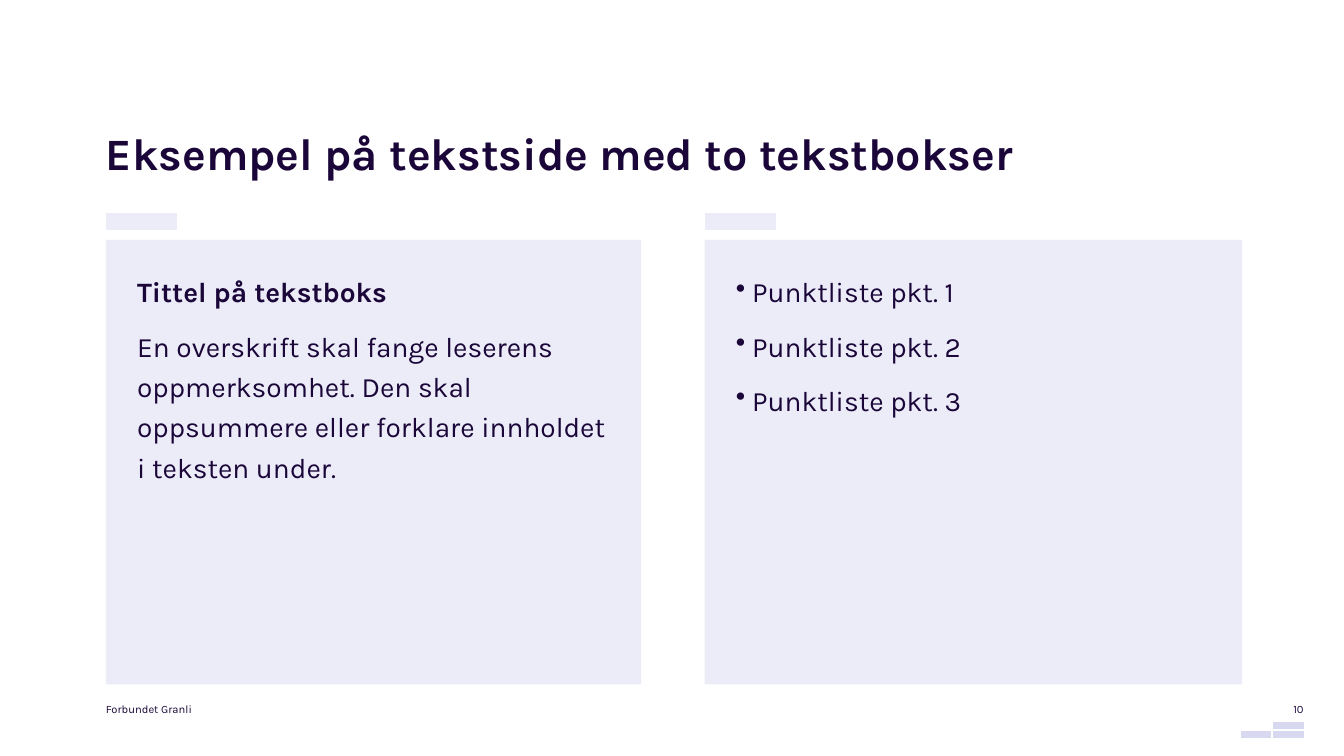
from dataclasses import dataclass

from lxml import etree
from pptx import Presentation
from pptx.dml.color import RGBColor
from pptx.enum.shapes import MSO_CONNECTOR, MSO_SHAPE
from pptx.enum.text import MSO_ANCHOR, MSO_AUTO_SIZE, PP_ALIGN
from pptx.oxml.ns import qn
from pptx.slide import Slide
from pptx.text.text import TextFrame, _Paragraph as Paragraph
from pptx.util import Inches, Pt

FONT = "Karla"
INK = "1A0638"
PANEL = "EBECF8"
ACCENT = "D8D9F1"
LEFT = 1.05
PANEL_TOP, PANEL_HEIGHT = 2.38, 4.41
TAB_Y, TAB_WIDTH = 2.2, 0.71
FOOTER_TOP = 6.97
DASH_WIDTH = 0.3


@dataclass
class Line:
    text: str
    bold: bool = False
    bullet: bool = False


@dataclass
class Panel:
    left: float
    width: float
    lines: list[Line]


@dataclass
class Footer:
    text: str
    left: float
    width: float
    align: PP_ALIGN


PANELS = [
    Panel(LEFT, 5.31, [
        Line("Tittel på tekstboks", bold=True),
        Line("En overskrift skal fange leserens oppmerksomhet. Den skal "
             "oppsummere eller forklare innholdet i teksten under."),
    ]),
    Panel(6.99, 5.33, [Line(f"Punktliste pkt. {number}", bullet=True) for number in (1, 2, 3)]),
]
FOOTERS = [
    Footer("Forbundet Granli", LEFT, 1.08, PP_ALIGN.LEFT),
    Footer("10", 12.55, 0.38, PP_ALIGN.RIGHT),
]
CORNER_DASHES = [(12.63, 7.29), (12.63, 7.2), (12.31, 7.29)]


def color(value: str) -> RGBColor:
    return RGBColor.from_string(value)


def set_frame(frame: TextFrame, left: float = 0, top: float = 0,
              right: float = 0, bottom: float = 0) -> None:
    frame.margin_left, frame.margin_top = Inches(left), Inches(top)
    frame.margin_right, frame.margin_bottom = Inches(right), Inches(bottom)
    frame.word_wrap = True
    frame.auto_size = MSO_AUTO_SIZE.NONE


def write(paragraph: Paragraph, text: str, size: float, bold: bool = False,
          align: PP_ALIGN = PP_ALIGN.LEFT) -> None:
    paragraph.text = text
    paragraph.alignment = align
    font = paragraph.font
    font.name, font.size, font.bold = FONT, Pt(size), bold
    font.color.rgb = color(INK)


def add_bullet(paragraph: Paragraph) -> None:
    properties = paragraph._p.get_or_add_pPr()
    properties.set("marL", str(Inches(0.16)))
    properties.set("indent", str(Inches(-0.2)))
    bullet = etree.Element(qn("a:buChar"), char="•")
    # The bullet has to come before the default run properties
    properties.find(qn("a:defRPr")).addprevious(bullet)


def add_dash(slide: Slide, left: float, y: float, width: float,
             line_color: str, weight: float) -> None:
    dash = slide.shapes.add_connector(
        MSO_CONNECTOR.STRAIGHT, Inches(left), Inches(y), Inches(left + width), Inches(y))
    dash.line.color.rgb = color(line_color)
    dash.line.width = Pt(weight)
    etree.SubElement(dash._element.spPr, qn("a:effectLst"))


def add_title(slide: Slide, text: str) -> None:
    title = slide.shapes.title
    title.left, title.top = Inches(LEFT), Inches(0.55)
    title.width, title.height = Inches(11.27), Inches(1.23)
    frame = title.text_frame
    set_frame(frame)
    frame.vertical_anchor = MSO_ANCHOR.BOTTOM
    paragraph = frame.paragraphs[0]
    write(paragraph, text, 32, bold=True)
    paragraph.line_spacing = 1.1


def add_panel(slide: Slide, panel: Panel) -> None:
    add_dash(slide, panel.left, TAB_Y, TAB_WIDTH, PANEL, 12.25)
    shape = slide.shapes.add_shape(
        MSO_SHAPE.RECTANGLE, Inches(panel.left), Inches(PANEL_TOP),
        Inches(panel.width), Inches(PANEL_HEIGHT))
    shape.shadow.inherit = False
    shape.fill.solid()
    shape.fill.fore_color.rgb = color(PANEL)
    shape.line.fill.background()
    frame = shape.text_frame
    set_frame(frame, 0.31, 0.28, 0.28, 0.31)
    frame.vertical_anchor = MSO_ANCHOR.TOP
    for index, line in enumerate(panel.lines):
        paragraph = frame.add_paragraph() if index else frame.paragraphs[0]
        write(paragraph, line.text, 20, line.bold)
        paragraph.line_spacing = 1.2
        paragraph.space_before = Pt(10)
        if line.bullet:
            add_bullet(paragraph)


def add_footer(slide: Slide, footer: Footer) -> None:
    box = slide.shapes.add_textbox(
        Inches(footer.left), Inches(FOOTER_TOP), Inches(footer.width), Inches(0.19))
    set_frame(box.text_frame)
    write(box.text_frame.paragraphs[0], footer.text, 8, align=footer.align)


def main() -> None:
    presentation = Presentation()
    presentation.slide_width, presentation.slide_height = Inches(13.33), Inches(7.5)
    slide = presentation.slides.add_slide(presentation.slide_layouts.get_by_name("Title Only"))

    # Title and the two text panels
    add_title(slide, "Eksempel på tekstside med to tekstbokser")
    for panel in PANELS:
        add_panel(slide, panel)

    # Footer texts and corner ornament
    for footer in FOOTERS:
        add_footer(slide, footer)
    for left, y in CORNER_DASHES:
        add_dash(slide, left, y, DASH_WIDTH, ACCENT, 4.75)

    presentation.save("out.pptx")


if __name__ == "__main__":
    main()
